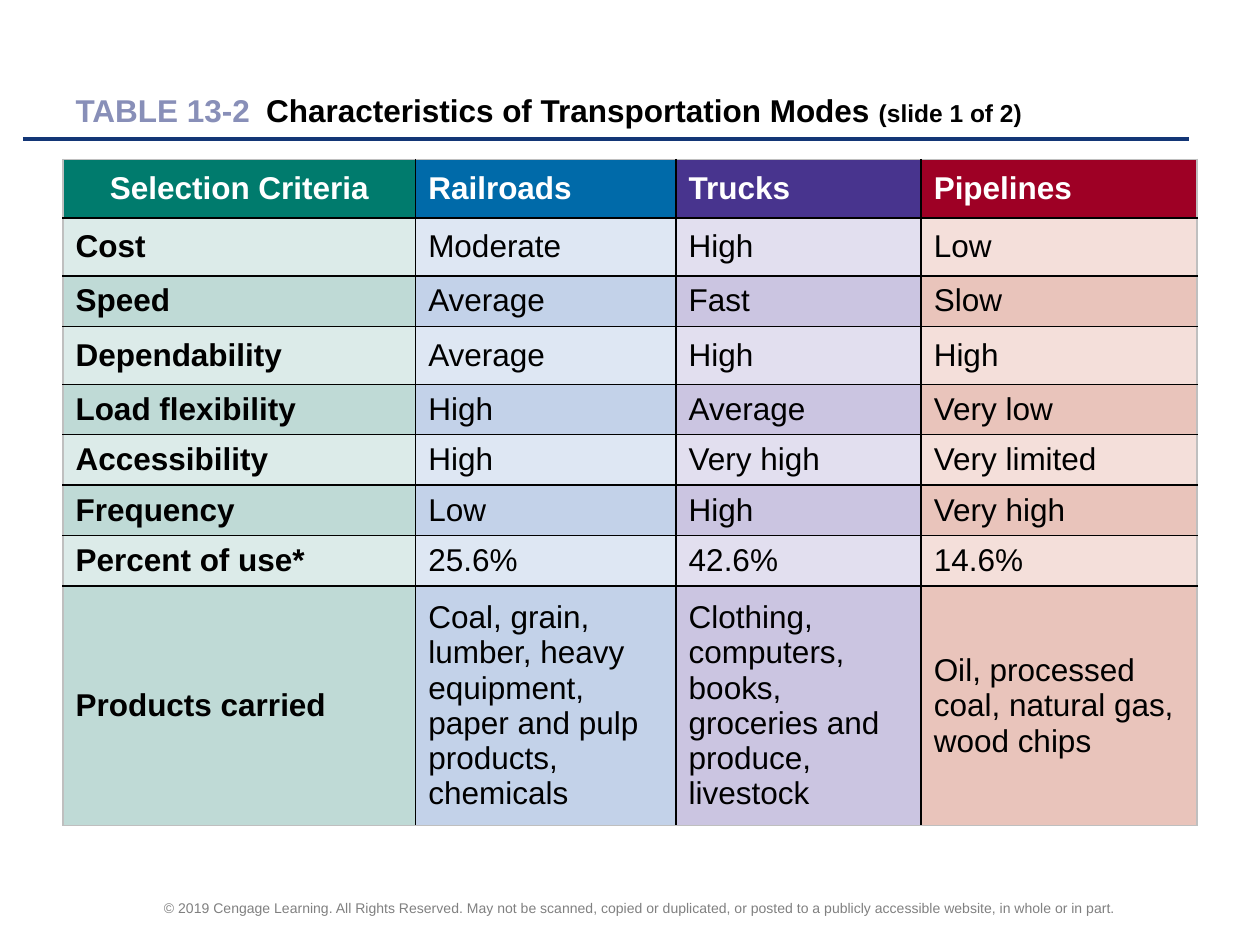
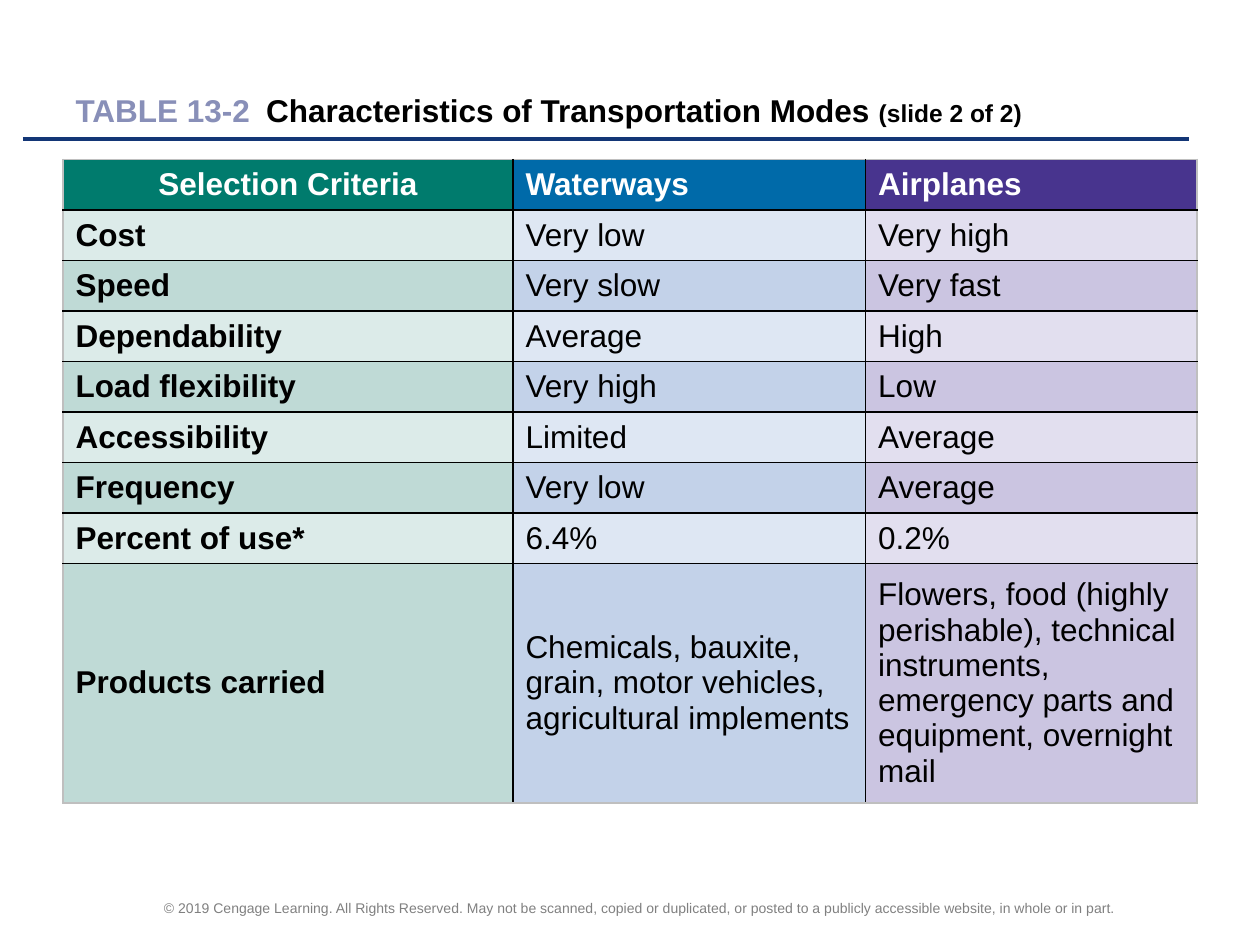
import pptx
import pptx.dml.color
import pptx.enum.shapes
import pptx.enum.text
import pptx.oxml
import pptx.oxml.ns
import pptx.util
from lxml import etree

Cm, Pt = pptx.util.Cm, pptx.util.Pt
Rgb = pptx.dml.color.RGBColor
Align, Anchor = pptx.enum.text.PP_ALIGN, pptx.enum.text.MSO_ANCHOR
qn = pptx.oxml.ns.qn

FACE = "Arial"
BLACK, WHITE = Rgb(0, 0, 0), Rgb(255, 255, 255)
GREY, EDGE = Rgb(0x80, 0x80, 0x80), Rgb(0xBF, 0xBF, 0xBF)
NAVY, LILAC = Rgb(0x13, 0x36, 0x76), Rgb(0x88, 0x8F, 0xB8)
HEADS = [Rgb.from_string(c) for c in ("007B6D", "006AA9", "48348E", "9E0025")]
PALE = [Rgb.from_string(c) for c in ("DCEBE9", "DEE7F3", "E2DFEF", "F4DFDA")]
DEEP = [Rgb.from_string(c) for c in ("BFDAD6", "C3D2E9", "CBC5E1", "E9C4BB")]

NOTICE = ("© 2019 Cengage Learning. All Rights Reserved. May not be scanned, copied "
          "or duplicated, or posted to a publicly accessible website, in whole or in part.")
LABELS = ["Selection Criteria", "Cost", "Speed", "Dependability", "Load flexibility",
          "Accessibility", "Frequency", "Percent of use*", "Products carried"]
RAIL = ["Railroads", "Moderate", "Average", "Average", "High", "High", "Low", "25.6%",
        "Coal, grain, lumber, heavy equipment, paper and pulp products, chemicals"]
TRUCK = ["Trucks", "High", "Fast", "High", "Average", "Very high", "High", "42.6%",
         "Clothing, computers, books, groceries and produce, livestock"]
PIPE = ["Pipelines", "Low", "Slow", "High", "Very low", "Very limited", "Very high",
        "14.6%", "Oil, processed coal, natural gas, wood chips"]
WATER = ["Waterways", "Very low", "Very slow", "Average", "Very high", "Limited",
         "Very low", "6.4%",
         "Chemicals, bauxite, grain, motor vehicles, agricultural implements"]
PLANE = ["Airplanes", "Very high", "Very fast", "High", "Low", "Average", "Average",
         "0.2%", "Flowers, food (highly perishable), technical instruments, "
         "emergency parts and equipment, overnight mail"]

LOW, TALL, LAST = 0.89, 1.17, 4.17
TABLES = [
    ([RAIL, TRUCK, PIPE], (7.11, 5.25, 4.94, 5.56),
     (TALL, TALL, LOW, TALL, LOW, LOW, LOW, LOW, LAST)),
    ([WATER, PLANE], (9.07, 7.11, 6.68), (LOW,) * 8 + (LAST,)),
]


def style(para, size, color, bold=False, align=Align.LEFT):
    """Set the font and alignment of a paragraph."""
    para.alignment = align
    font = para.font
    font.name, font.size, font.bold = FACE, Pt(size), bold
    font.color.rgb = color


def add_foot(slide, left, top, width, height):
    """Add the copyright line."""
    box = slide.shapes.add_textbox(left, top, width, height)
    frame = box.text_frame
    frame.word_wrap = True
    frame.vertical_anchor = Anchor.MIDDLE
    frame.text = NOTICE
    style(frame.paragraphs[0], 8, GREY, align=Align.CENTER)


def add_rule(slide, left, top, width):
    """Add the line below the title."""
    rule = slide.shapes.add_connector(
        pptx.enum.shapes.MSO_CONNECTOR.STRAIGHT, left, top, left + width, top)
    rule.line.color.rgb, rule.line.width = NAVY, Pt(2.25)
    props = rule.element.find(qn("p:spPr"))
    etree.SubElement(props, qn("a:effectLst"))


def set_title(slide, part, left, top, width, height):
    """Place the title and fill in its three runs."""
    title = slide.shapes.title
    title.left, title.top, title.width, title.height = left, top, width, height
    frame = title.text_frame
    frame.word_wrap = True
    frame.auto_size = pptx.enum.text.MSO_AUTO_SIZE.NONE
    frame.vertical_anchor = Anchor.MIDDLE
    para = frame.paragraphs[0]
    tabs = etree.SubElement(para._p.get_or_add_pPr(), qn("a:tabLst"))
    etree.SubElement(tabs, qn("a:tab"), pos=str(Cm(3.84)), algn="l")
    style(para, 18, BLACK, bold=True)
    texts = ("TABLE 13-2", "\tCharacteristics of Transportation Modes ",
             f"(slide {part} of {len(TABLES)})")
    runs = [para.add_run() for _ in texts]
    for run, text in zip(runs, texts):
        run.text = text
    runs[0].font.color.rgb = LILAC
    runs[2].font.size = Pt(14)


def set_edges(cell, outer):
    """Draw the four cell borders, lighter on the outer sides."""
    props = cell._tc.get_or_add_tcPr()
    for side in "LRTB":
        line = etree.SubElement(props, qn(f"a:ln{side}"), w=str(Pt(1)))
        fill = etree.SubElement(line, qn("a:solidFill"))
        color = EDGE if side in outer else BLACK
        etree.SubElement(fill, qn("a:srgbClr"), val=str(color))


def add_grid(slide, modes, widths, heights, left, top):
    """Add the table with one column for each transport mode."""
    cols = [LABELS] + modes
    shape = slide.shapes.add_table(len(LABELS), len(cols), left, top,
                                   Cm(sum(widths)), Cm(sum(heights)))
    table = shape.table
    table.first_row = table.horz_banding = False
    for row, height in zip(table.rows, heights):
        row.height = Cm(height)
    for c, (texts, width) in enumerate(zip(cols, widths)):
        table.columns[c].width = Cm(width)
        for r, text in enumerate(texts):
            cell = table.cell(r, c)
            sides = {"L": c == 0, "R": c == len(cols) - 1,
                     "T": r == 0, "B": r == len(texts) - 1}
            set_edges(cell, [side for side, on in sides.items() if on])
            shades = HEADS if r == 0 else PALE if r % 2 else DEEP
            cell.fill.solid()
            cell.fill.fore_color.rgb = shades[c]
            cell.vertical_anchor = Anchor.MIDDLE
            cell.text = text
            style(cell.text_frame.paragraphs[0], 18, BLACK if r else WHITE,
                  bold=r == 0 or c == 0,
                  align=Align.CENTER if r == c == 0 else Align.LEFT)


def add_page(deck, part, modes, widths, heights):
    """Build one slide of the table."""
    slide = deck.slides.add_slide(deck.slide_layouts[5])
    add_foot(slide, Cm(1.9), Cm(17.98), Cm(22.02), Cm(0.64))
    add_rule(slide, Cm(0.46), Cm(2.81), Cm(23.5))
    set_title(slide, part, Cm(1.27), Cm(1.27), Cm(22.86), Cm(1.9))
    add_grid(slide, modes, widths, heights, Cm(1.27), Cm(3.22))


def main():
    """Build and save the deck."""
    deck = pptx.Presentation()
    deck.slide_width, deck.slide_height = Cm(25.4), Cm(19.05)
    for part, spec in enumerate(TABLES, 1):
        add_page(deck, part, *spec)
    deck.save("out.pptx")


if __name__ == "__main__":
    main()
